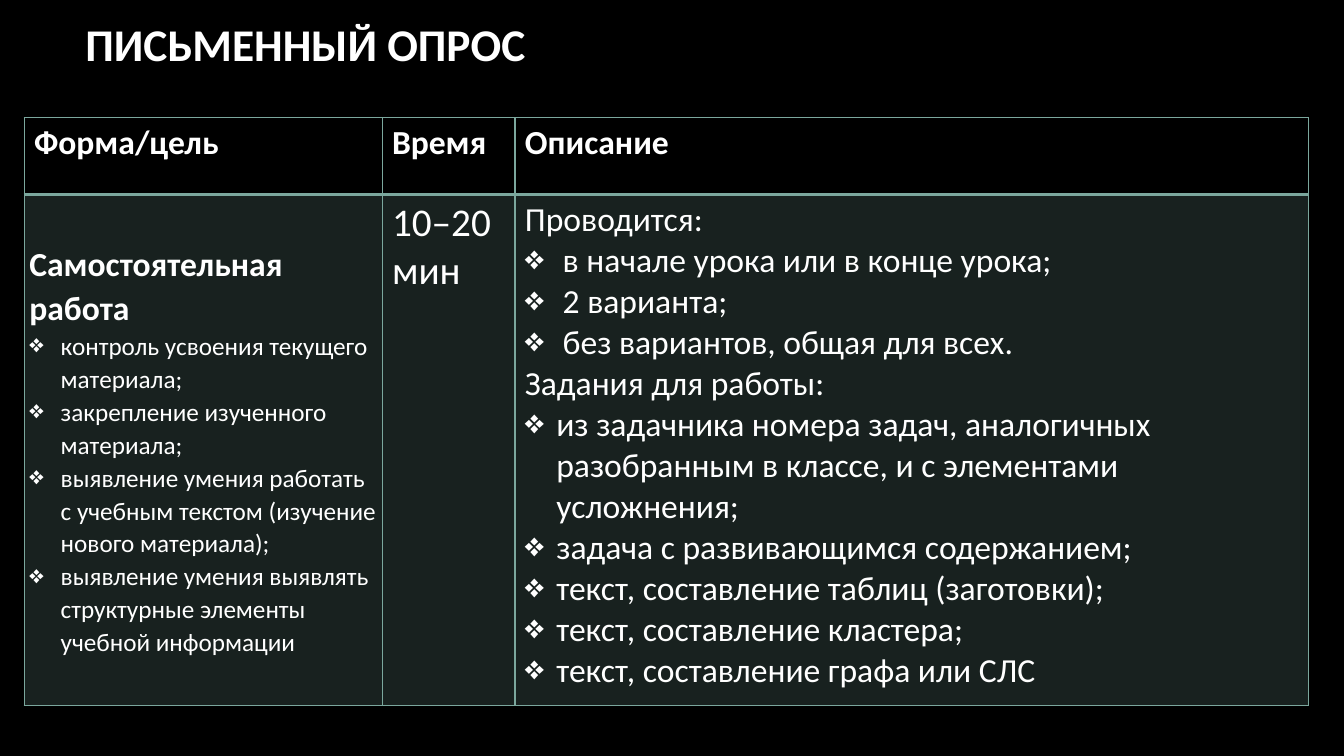
"""Build the slide on written tests with its table of form, time and description."""
from dataclasses import dataclass

from lxml.etree import SubElement
from pptx import Presentation
from pptx.dml.color import RGBColor
from pptx.enum.text import MSO_ANCHOR
from pptx.oxml.ns import qn
from pptx.util import Cm, Pt

BLACK, WHITE, SAGE = "000000", "FFFFFF", "7BA79D"
COLUMN_WIDTHS = (9.02, 3.35, 19.99)
ROW_HEIGHTS = (1.93, 12.88)


@dataclass(frozen=True)
class Line:
    text: str
    size: float = 24
    bold: bool = False
    indent: float = 0
    spacing: float = 1.0


@dataclass(frozen=True)
class Entry:
    lines: list[Line]
    side_margin: float = 0.25
    anchor: MSO_ANCHOR = MSO_ANCHOR.TOP


def bullets(*texts: str, **options) -> list[Line]:
    return [Line(text, **options) for text in texts]


HEADER = [Entry([Line(text, bold=True)]) for text in ("Форма/цель", "Время", "Описание")]
BODY = [
    Entry(
        [
            Line("Самостоятельная работа", bold=True, spacing=1.07),
            *bullets(
                "контроль усвоения текущего материала;",
                "закрепление изученного материала;",
                "выявление умения работать с учебным текстом (изучение нового материала);",
                "выявление умения выявлять структурные элементы учебной информации",
                size=18, indent=0.79, spacing=1.07,
            ),
        ],
        side_margin=0.13,
        anchor=MSO_ANCHOR.MIDDLE,
    ),
    Entry([Line("10–20 мин", size=28)]),
    Entry(
        [
            Line("Проводится:"),
            *bullets(
                "в начале урока или в конце урока;",
                "2 варианта;",
                "без вариантов, общая для всех.",
                indent=0.95,
            ),
            Line("Задания для работы:"),
            *bullets(
                "из задачника номера задач, аналогичных разобранным в классе, "
                "и с элементами усложнения;",
                "задача с развивающимся содержанием;",
                "текст, составление таблиц (заготовки);",
                "текст, составление кластера;",
                "текст, составление графа или СЛС",
                indent=0.79,
            ),
        ]
    ),
]


def rgb(color: str) -> RGBColor:
    return RGBColor.from_string(color)


def write(para, text: str, *, size: float, bold: bool = False, indent: float = 0,
          spacing: float = 1.0, color: str = WHITE) -> None:
    span = para.add_run()
    span.text = text
    span.font.name = "Calibri"
    span.font.size = Pt(size)
    span.font.bold = bold
    span.font.color.rgb = rgb(color)
    para.line_spacing = spacing
    if indent:
        properties = para._p.get_or_add_pPr()
        properties.set("marL", str(Cm(indent)))
        properties.set("indent", str(-Cm(indent)))
        SubElement(properties, qn("a:buChar"), char="❖")


def draw_borders(cell, top: float, bottom: float) -> None:
    properties = cell._tc.get_or_add_tcPr()
    for side, width in (("lnL", 1), ("lnR", 1), ("lnT", top), ("lnB", bottom)):
        border = SubElement(properties, qn(f"a:{side}"), w=str(Pt(width)))
        fill = SubElement(border, qn("a:solidFill"))
        SubElement(fill, qn("a:srgbClr"), val=SAGE)


def fill_cell(cell, color: str, opacity: int) -> None:
    cell.fill.solid()
    cell.fill.fore_color.rgb = rgb(color)
    shade = cell._tc.tcPr.find(f"{qn('a:solidFill')}/{qn('a:srgbClr')}")
    SubElement(shade, qn("a:alpha"), val=str(opacity * 1000))


def draw_entry(cell, entry: Entry) -> None:
    cell.margin_left = cell.margin_right = Cm(entry.side_margin)
    cell.margin_top = cell.margin_bottom = Cm(0.13)
    cell.vertical_anchor = entry.anchor
    frame = cell.text_frame
    for number, line in enumerate(entry.lines):
        para = frame.add_paragraph() if number else frame.paragraphs[0]
        write(para, line.text, size=line.size, bold=line.bold,
              indent=line.indent, spacing=line.spacing)


def draw_title(page) -> None:
    box = page.shapes.add_textbox(Cm(1.9), Cm(0.33), Cm(28.14), Cm(1.55))
    box.text_frame.word_wrap = True
    box.text_frame.vertical_anchor = MSO_ANCHOR.MIDDLE
    write(box.text_frame.paragraphs[0], "ПИСЬМЕННЫЙ ОПРОС", size=32.4, bold=True)


def draw_table(page) -> None:
    table = page.shapes.add_table(
        len(ROW_HEIGHTS), len(COLUMN_WIDTHS), Cm(0.61), Cm(2.97),
        Cm(sum(COLUMN_WIDTHS)), Cm(sum(ROW_HEIGHTS)),
    ).table
    table.first_row = table.horz_banding = False
    for column, width in zip(table.columns, COLUMN_WIDTHS):
        column.width = Cm(width)
    for row, height in zip(table.rows, ROW_HEIGHTS):
        row.height = Cm(height)
    styles = ((HEADER, 1, 2, BLACK, 100), (BODY, 2, 1, SAGE, 20))
    for row, (entries, top, bottom, color, opacity) in zip(table.rows, styles):
        for cell, entry in zip(row.cells, entries):
            draw_borders(cell, top, bottom)
            fill_cell(cell, color, opacity)
            draw_entry(cell, entry)


def main() -> None:
    deck = Presentation()
    deck.slide_width, deck.slide_height = Cm(33.87), Cm(19.05)
    page = deck.slides.add_slide(deck.slide_layouts[6])
    page.background.fill.solid()
    page.background.fill.fore_color.rgb = rgb(BLACK)
    draw_title(page)
    draw_table(page)
    deck.save("out.pptx")


if __name__ == "__main__":
    main()
